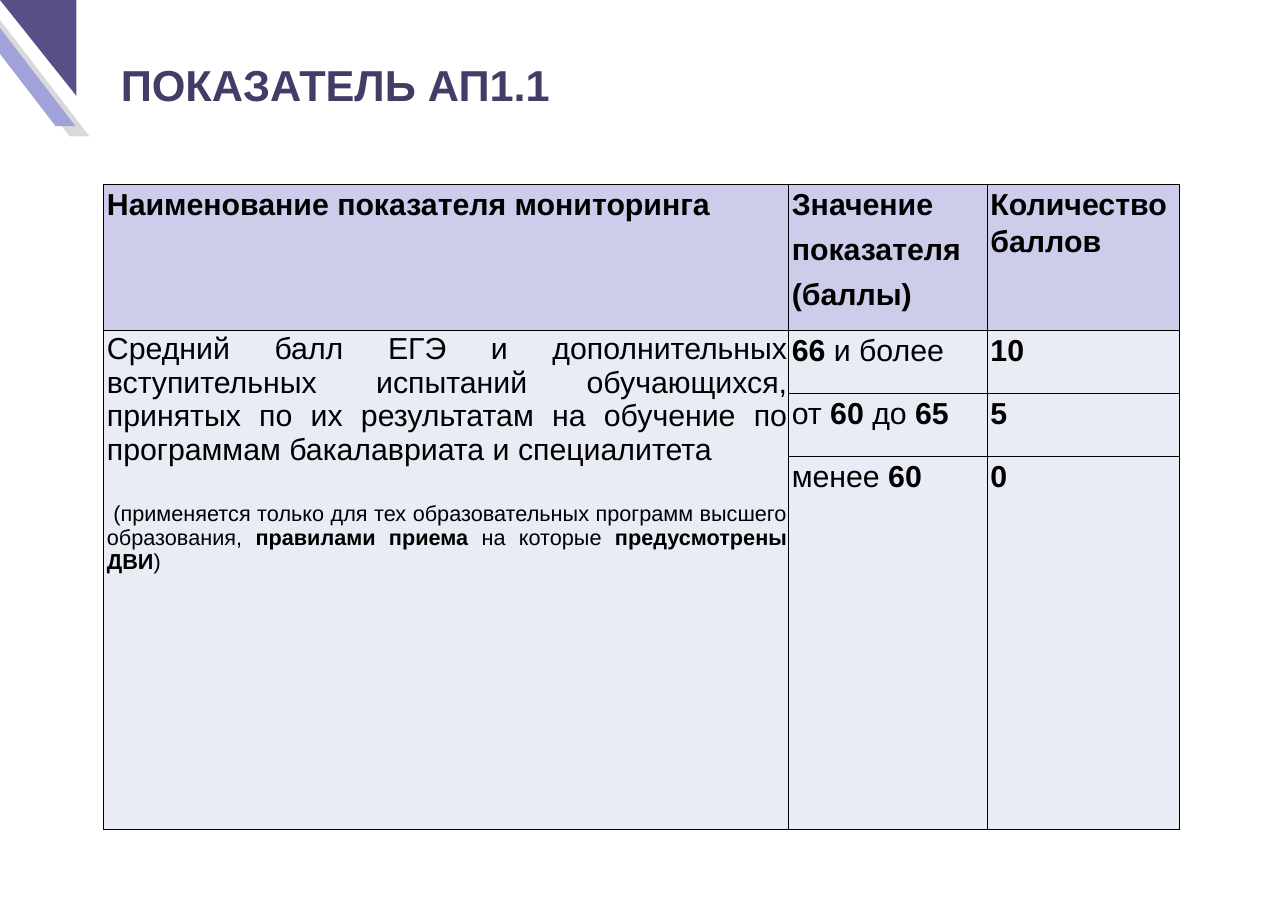
"""Build the slide with the scoring table of indicator АП1.1."""
from dataclasses import dataclass

from lxml.etree import SubElement
from pptx import Presentation
from pptx.dml.color import RGBColor
from pptx.enum.shapes import MSO_SHAPE as Preset
from pptx.enum.text import MSO_ANCHOR as Anchor
from pptx.enum.text import MSO_AUTO_SIZE as AutoSize
from pptx.enum.text import PP_ALIGN as Align
from pptx.oxml.ns import qn
from pptx.util import Pt


@dataclass(frozen=True)
class Theme:
    """Colours, font and type sizes of the slide."""
    font: str = "Arial"
    title_size: int = 40
    table_size: int = 28
    note_size: int = 20
    title: str = "423D67"
    text: str = "000000"
    border: str = "000000"
    header_fill: str = "CDCDEB"
    body_fill: str = "E9EBF5"
    corner: str = "565087"
    stripe: str = "A2A2DA"
    stripe_shade: str = "D9D9D9"


THEME = Theme()
COLUMNS = (632.9, 183.6, 177.7)
ROWS = (134.6, 58.3, 58.3, 344.2)
HEADERS = (
    ["*Наименование показателя мониторинга*"],
    ["*Значение*", "*показателя*", "*(баллы)*"],
    ["*Количество баллов*"],
)
INDICATOR = (
    "Средний балл ЕГЭ и дополнительных вступительных испытаний обучающихся, "
    "принятых по их результатам на обучение по программам бакалавриата и специалитета "
)
NOTE = (
    " (применяется только для тех образовательных программ высшего образования, "
    "*правилами приема *на которые *предусмотрены ДВИ*)"
)
SCORES = (
    ("*66* и более", "*10*"),
    ("от *60* до *65*", "*5*"),
    ("менее *60*", "*0*"),
)


def style_font(font, size, color, bold):
    """Apply the theme font with a size, colour and weight."""
    font.name = THEME.font
    font.size = Pt(size)
    font.color.rgb = RGBColor.from_string(color)
    font.bold = bold


def write_para(para, marked, size=THEME.table_size):
    """Write text in which asterisks enclose the bold spans."""
    for index, text in enumerate(marked.split("*")):
        if text:
            span = para.add_run()
            span.text = text
            style_font(span.font, size, THEME.text, index % 2 == 1)


def write_lines(cell, lines):
    """Write the paragraphs of a header or score cell."""
    frame = cell.text_frame
    for index, line in enumerate(lines):
        para = frame.add_paragraph() if index else frame.paragraphs[0]
        para.line_spacing = 1.07
        para.space_after = Pt(8)
        write_para(para, line)


def write_indicator(cell):
    """Write the justified indicator description and its note."""
    frame = cell.text_frame
    description, note = frame.paragraphs[0], frame.add_paragraph()
    description.alignment = note.alignment = Align.JUSTIFY
    note.space_before = Pt(32)
    write_para(description, INDICATOR)
    write_para(note, NOTE, THEME.note_size)


def style_cell(cell, fill):
    """Give a cell its margins, black borders and fill."""
    cell.margin_left = Pt(3)
    cell.margin_right = cell.margin_top = cell.margin_bottom = Pt(1.5)
    properties = cell._tc.get_or_add_tcPr()
    for side in ("a:lnL", "a:lnR", "a:lnT", "a:lnB"):
        line = SubElement(properties, qn(side), w=str(Pt(1)))
        SubElement(SubElement(line, qn("a:solidFill")), qn("a:srgbClr"), val=THEME.border)
    cell.fill.solid()
    cell.fill.fore_color.rgb = RGBColor.from_string(fill)


def add_corner(page, left, top):
    """Draw the striped corner ornament from the given point."""
    parts = (
        (Preset.PARALLELOGRAM, -25.2, 9.4, 108, 116.6, THEME.stripe_shade),
        (Preset.PARALLELOGRAM, -38.2, 0, 108, 116.6, THEME.stripe),
        (Preset.RIGHT_TRIANGLE, 0, 0, 70.6, 88.6, THEME.corner),
    )
    for preset, x, y, width, height, color in parts:
        shape = page.shapes.add_shape(preset, Pt(left + x), Pt(top + y), Pt(width), Pt(height))
        shape.shadow.inherit = False
        shape.fill.solid()
        shape.fill.fore_color.rgb = RGBColor.from_string(color)
        shape.line.fill.background()
        if preset == Preset.PARALLELOGRAM:
            shape.adjustments[0] = 0.83
            shape._element.spPr.get_or_add_xfrm().set("flipH", "1")
        else:
            shape.rotation = 180


def add_title(page, left, top, width, height):
    """Place the slide title in the given box."""
    box = page.shapes.title
    box.left, box.top, box.width, box.height = Pt(left), Pt(top), Pt(width), Pt(height)
    frame = box.text_frame
    frame.text = "ПОКАЗАТЕЛЬ АП1.1"
    frame.auto_size = AutoSize.NONE
    frame.word_wrap = True
    frame.vertical_anchor = Anchor.TOP
    frame.margin_left = 0
    frame.margin_top = frame.margin_bottom = Pt(3.6)
    para = frame.paragraphs[0]
    para.alignment = Align.LEFT
    style_font(para.runs[0].font, THEME.title_size, THEME.title, True)


def add_score_table(page, left, top):
    """Build the table of indicator values and scores at the given point."""
    table = page.shapes.add_table(
        len(ROWS), len(COLUMNS), Pt(left), Pt(top), Pt(sum(COLUMNS)), Pt(sum(ROWS))
    ).table
    for column, width in zip(table.columns, COLUMNS):
        column.width = Pt(width)
    for index, (row, height) in enumerate(zip(table.rows, ROWS)):
        row.height = Pt(height)
        for cell in row.cells:
            style_cell(cell, THEME.body_fill if index else THEME.header_fill)
    table.cell(1, 0).merge(table.cell(3, 0))
    for column, lines in enumerate(HEADERS):
        write_lines(table.cell(0, column), lines)
    write_indicator(table.cell(1, 0))
    for row, score in enumerate(SCORES, start=1):
        for column, text in enumerate(score, start=1):
            write_lines(table.cell(row, column), [text])


def main():
    """Assemble and save the deck."""
    deck = Presentation()
    deck.slide_width, deck.slide_height = Pt(1190.2), Pt(841.7)
    page = deck.slides.add_slide(deck.slide_layouts[5])
    add_corner(page, 0, 0)
    add_title(page, 111.6, 50.4, 893.5, 55.4)
    add_score_table(page, 95.8, 170.6)
    deck.save("out.pptx")


if __name__ == "__main__":
    main()
